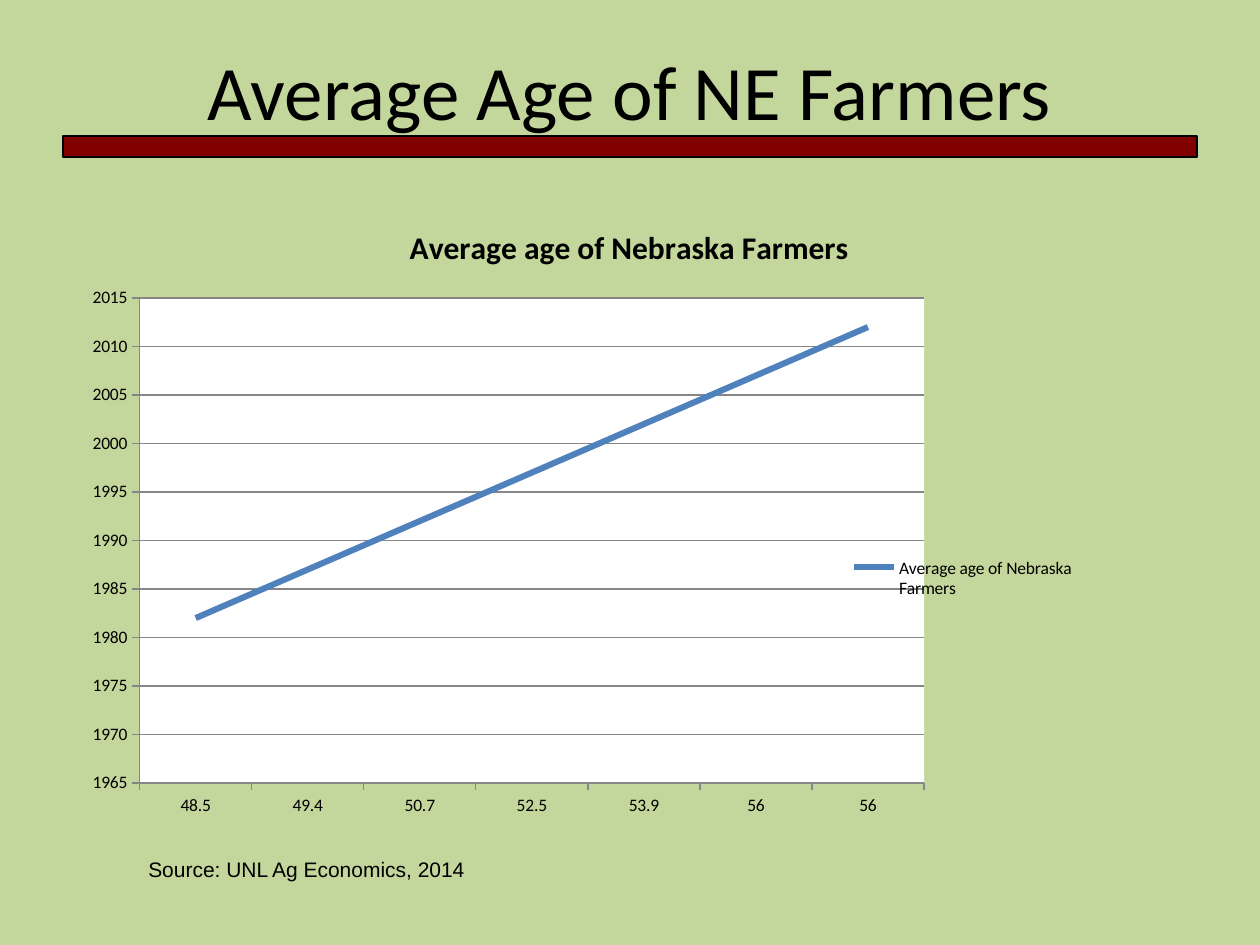
from dataclasses import dataclass

from lxml import etree
from pptx import Presentation
from pptx.chart.data import CategoryChartData
from pptx.dml.color import RGBColor
from pptx.enum.chart import XL_CHART_TYPE, XL_LEGEND_POSITION, XL_TICK_MARK
from pptx.enum.shapes import MSO_SHAPE
from pptx.enum.text import PP_ALIGN
from pptx.oxml import parse_xml
from pptx.oxml.ns import nsdecls, qn
from pptx.util import Cm, Pt

LINE = XL_CHART_TYPE.LINE
RIGHT = XL_LEGEND_POSITION.RIGHT
OUTSIDE = XL_TICK_MARK.OUTSIDE
RECTANGLE = MSO_SHAPE.RECTANGLE
LEFT, CENTER = PP_ALIGN.LEFT, PP_ALIGN.CENTER

TITLE = "Average Age of NE Farmers"
SOURCE = "Source: UNL Ag Economics, 2014"
SERIES = "Average age of Nebraska Farmers"
AGES = ["48.5", "49.4", "50.7", "52.5", "53.9", "56", "56"]
YEARS = list(range(1982, 2013, 5))

PLACES = {
    "bar": (1.27, 2.74, 22.86, 0.43),
    "title": (1.27, 0.76, 22.86, 3.18),
    "chart": (1.47, 4.04, 22.43, 12.7),
    "source": (2.74, 17.15, 15.04, 0.76),
}
PLOT_AREA = (0.06, 0.155, 0.705, 0.77)
LEGEND_AREA = (0.69, 0.55, 0.22, 0.1)


@dataclass(frozen=True)
class Theme:
    background: RGBColor = RGBColor.from_string("C3D69B")
    bar: RGBColor = RGBColor.from_string("800000")
    ink: RGBColor = RGBColor.from_string("000000")
    series: RGBColor = RGBColor.from_string("4F81BD")
    grid: RGBColor = RGBColor.from_string("868686")
    plot: str = "FFFFFF"
    font: str = "Calibri"
    source_font: str = "Arial"
    title_size: int = 44
    chart_title_size: int = 18
    chart_size: int = 10
    source_size: int = 12


THEME = Theme()


def place(name):
    return [Cm(length) for length in PLACES[name]]


def style_font(font, name, size, bold=False):
    font.name, font.size, font.bold = name, Pt(size), bold
    font.color.rgb = THEME.ink


def add_text(page, name, text, font, size, alignment):
    frame = page.shapes.add_textbox(*place(name)).text_frame
    frame.word_wrap = True
    para = frame.paragraphs[0]
    para.text, para.alignment = text, alignment
    style_font(para.font, font, size)


def add_bar(page):
    bar = page.shapes.add_shape(RECTANGLE, *place("bar"))
    bar.shadow.inherit = False
    bar.fill.solid()
    bar.fill.fore_color.rgb = THEME.bar
    bar.line.color.rgb = THEME.ink
    bar.line.width = Pt(1)


def set_layout(element, area, index, inner=False):
    for old in element.findall(qn("c:layout")):
        element.remove(old)
    layout = etree.Element(qn("c:layout"))
    manual = etree.SubElement(layout, qn("c:manualLayout"))
    settings = [("layoutTarget", "inner")] if inner else []
    settings += [("xMode", "edge"), ("yMode", "edge")]
    settings += zip("xywh", map(str, area))
    for tag, value in settings:
        etree.SubElement(manual, qn(f"c:{tag}")).set("val", value)
    element.insert(index, layout)


def add_age_chart(page):
    data = CategoryChartData()
    data.categories = AGES
    data.add_series(SERIES, YEARS)
    chart = page.shapes.add_chart(LINE, *place("chart"), data).chart
    style_font(chart.font, THEME.font, THEME.chart_size)

    chart.has_title = True
    para = chart.chart_title.text_frame.paragraphs[0]
    para.text = SERIES
    style_font(para.font, THEME.font, THEME.chart_title_size, True)

    chart.has_legend = True
    chart.legend.position = RIGHT
    chart.legend.include_in_layout = False
    set_layout(chart.legend._element, LEGEND_AREA, 1)

    years = chart.value_axis
    years.minimum_scale, years.maximum_scale, years.major_unit = 1965, 2015, 5
    years.has_major_gridlines = True
    years.tick_labels.number_format = "General"
    years.tick_labels.number_format_is_linked = False
    for axis in (years, chart.category_axis):
        axis.major_tick_mark = OUTSIDE
    for rule in (years, chart.category_axis, years.major_gridlines):
        rule.format.line.color.rgb = THEME.grid
        rule.format.line.width = Pt(0.75)

    plot = chart.plots[0]
    plot.vary_by_categories = False
    series = plot.series[0]
    series.smooth = False
    series.format.line.color.rgb = THEME.series
    series.format.line.width = Pt(3.5)

    area = chart._chartSpace.chart.plotArea
    set_layout(area, PLOT_AREA, 0, inner=True)
    area.append(parse_xml(
        f'<c:spPr {nsdecls("c", "a")}><a:solidFill>'
        f'<a:srgbClr val="{THEME.plot}"/></a:solidFill></c:spPr>'))


def main():
    """Build the slide on the average age of Nebraska farmers."""
    deck = Presentation()
    deck.slide_width, deck.slide_height = Cm(25.4), Cm(19.05)
    page = deck.slides.add_slide(deck.slide_layouts[6])
    page.background.fill.solid()
    page.background.fill.fore_color.rgb = THEME.background
    add_bar(page)
    add_text(page, "title", TITLE, THEME.font, THEME.title_size, CENTER)
    add_age_chart(page)
    add_text(page, "source", SOURCE, THEME.source_font, THEME.source_size, LEFT)
    deck.save("out.pptx")


if __name__ == "__main__":
    main()
